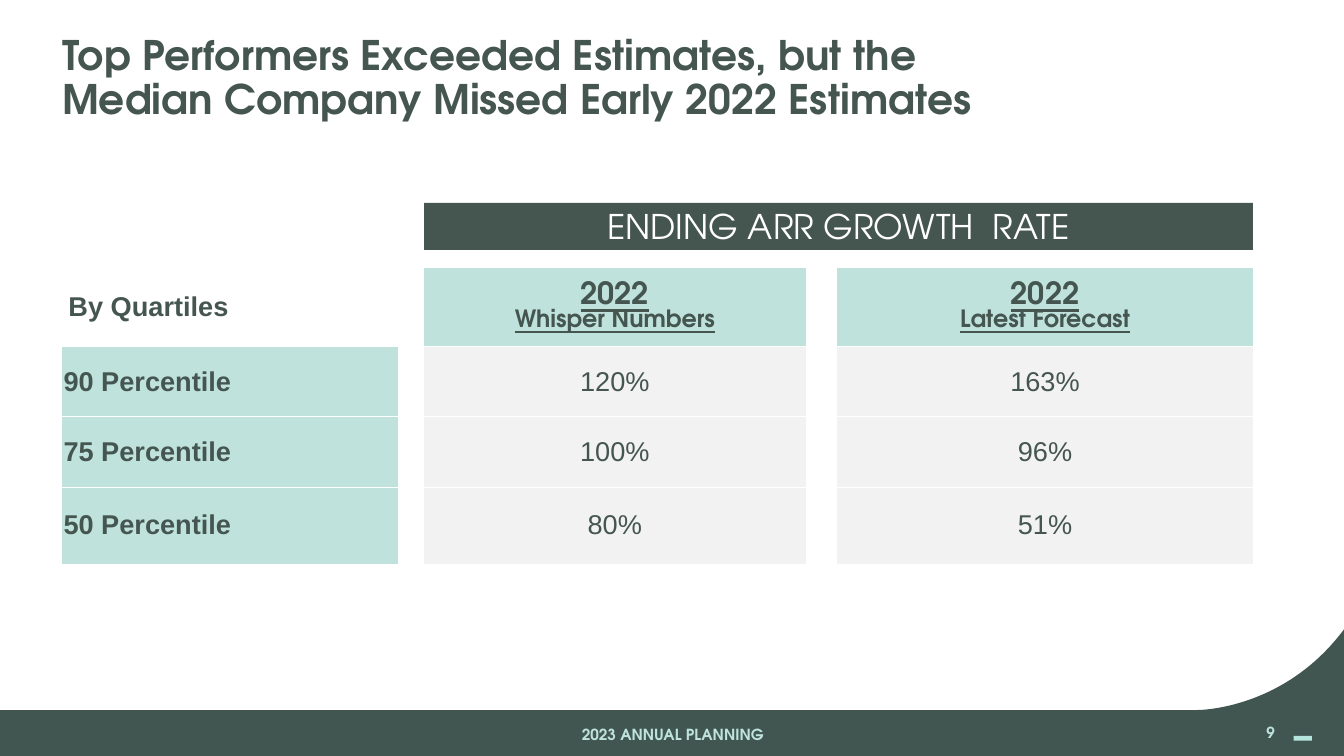
import pptx
import pptx.util
import pptx.dml.color
import pptx.enum.shapes
import pptx.enum.text
import pptx.oxml
import pptx.oxml.ns

Cm, Pt = pptx.util.Cm, pptx.util.Pt
RGB = pptx.dml.color.RGBColor
ALIGN = pptx.enum.text.PP_ALIGN
ANCHOR = pptx.enum.text.MSO_ANCHOR
RECT = pptx.enum.shapes.MSO_SHAPE.RECTANGLE

DARK = RGB(0x45, 0x55, 0x50)
WAVE = RGB(0x41, 0x56, 0x51)
MINT = RGB(0xBF, 0xE3, 0xDC)
MARK = RGB(0xB5, 0xE5, 0xDC)
GREY = RGB(0xF2, 0xF2, 0xF2)
WHITE = RGB(0xFF, 0xFF, 0xFF)
DISPLAY, BODY = "TeX Gyre Adventor", "Arial"


def style(p, size, name, color, bold, align):
    p.alignment = align
    p.font.size, p.font.name, p.font.bold = Pt(size), name, bold
    p.font.color.rgb = color


def fill_plain(sp, color):
    sp.shadow.inherit = False
    sp.fill.solid()
    sp.fill.fore_color.rgb = color
    sp.line.fill.background()


prs = pptx.Presentation()
prs.slide_width, prs.slide_height = Cm(55.86), Cm(31.42)
s = prs.slides.add_slide(prs.slide_layouts[6])

# Footer band, rising along a Bezier curve at the right
curve = [(49.76, 29.51), (49.76, 29.51), (53.34, 29.54), (55.86, 26.16)]
outline = [(0, 31.42), (0, 29.51)]
steps = 40
for i in range(steps + 1):
    t = i / steps
    weights = ((1 - t) ** 3, 3 * t * (1 - t) ** 2, 3 * t * t * (1 - t), t ** 3)
    outline.append(tuple(sum(w * pt[axis] for w, pt in zip(weights, curve)) for axis in (0, 1)))
band = s.shapes.build_freeform(Cm(55.86), Cm(31.42))
band.add_line_segments([(Cm(x), Cm(y)) for x, y in outline], close=True)
fill_plain(band.convert_to_shape(), WAVE)

# Plain mark in the corner
fill_plain(s.shapes.add_shape(RECT, Cm(53.77), Cm(30.58), Cm(0.76), Cm(0.2)), MARK)

# Title, footer and page number
texts = [
    ("Top Performers Exceeded Estimates, but the\nMedian Company Missed Early 2022 Estimates",
     2.59, 1.3, 52.3, 3.96, 48, DARK, ALIGN.LEFT),
    ("2023 ANNUAL PLANNING", 18.54, 29.67, 18.85, 1.68, 18, MINT, ALIGN.CENTER),
    ("9", 40.67, 29.62, 12.57, 1.68, 18, MINT, ALIGN.RIGHT),
]
for text, x, y, w, h, size, color, align in texts:
    tf = s.shapes.add_textbox(Cm(x), Cm(y), Cm(w), Cm(h)).text_frame
    tf.word_wrap = True
    tf.vertical_anchor = ANCHOR.MIDDLE
    p = tf.paragraphs[0]
    p.text = text
    style(p, size, DISPLAY, color, True, align)
    if align == ALIGN.LEFT:
        tf.margin_left = 0
        p.line_spacing = 0.9

# Growth table: narrow white columns separate the three wide ones
widths = [13.97, 1.07, 15.85, 1.32, 17.27]
heights = [3.3, 2.92, 2.92, 3.2]
rows = [
    ["By Quartiles", "", "2022\nWhisper Numbers", "", "2022\nLatest Forecast"],
    ["90 Percentile", "", "120%", "", "163%"],
    ["75 Percentile", "", "100%", "", "96%"],
    ["50 Percentile", "", "80%", "", "51%"],
]
table = s.shapes.add_table(len(rows), len(widths), Cm(2.59), Cm(11.1),
                           Cm(sum(widths)), Cm(sum(heights))).table
table.first_row = table.horz_banding = False
for column, width in zip(table.columns, widths):
    column.width = Cm(width)
for row, height in zip(table.rows, heights):
    row.height = Cm(height)

# White rules above and below each cell, none at the sides
white_line = f'<a:solidFill><a:srgbClr val="{WHITE}"/></a:solidFill>'
borders = [("lnL", "<a:noFill/>"), ("lnR", "<a:noFill/>"),
           ("lnT", white_line), ("lnB", white_line)]

for r, row in enumerate(rows):
    for c, text in enumerate(row):
        cell = table.cell(r, c)
        header, label = r == 0, c == 0
        cell.fill.solid()
        if not text or header and label:
            cell.fill.fore_color.rgb = WHITE
        else:
            cell.fill.fore_color.rgb = MINT if header or label else GREY
        for i, (side, line) in enumerate(borders):
            cell._tc.get_or_add_tcPr().insert(i, pptx.oxml.parse_xml(
                f'<a:{side} {pptx.oxml.ns.nsdecls("a")} w="12700">{line}</a:{side}>'))
        if not text:
            continue
        cell.vertical_anchor = ANCHOR.MIDDLE
        if not header:
            cell.margin_left = cell.margin_right = Cm(0.05)
            cell.margin_top = cell.margin_bottom = Cm(0.05)
        p = cell.text_frame.paragraphs[0]
        p.text = text
        style(p, 32, BODY, DARK, header or label, ALIGN.LEFT if label else ALIGN.CENTER)
        if header and not label:
            p.line_spacing = 1.0
            for run, size in zip(p.runs, (36, 28)):
                run.font.size, run.font.name = Pt(size), DISPLAY
                run.font.bold = run.font.underline = True

# Banner over the two value columns
sp = s.shapes.add_shape(RECT, Cm(17.63), Cm(8.43), Cm(34.44), Cm(1.96))
fill_plain(sp, DARK)
tf = sp.text_frame
tf.word_wrap = True
tf.vertical_anchor = ANCHOR.TOP
p = tf.paragraphs[0]
p.text = "ENDING ARR GROWTH  RATE"
style(p, 40, DISPLAY, WHITE, False, ALIGN.CENTER)

prs.save("out.pptx")
